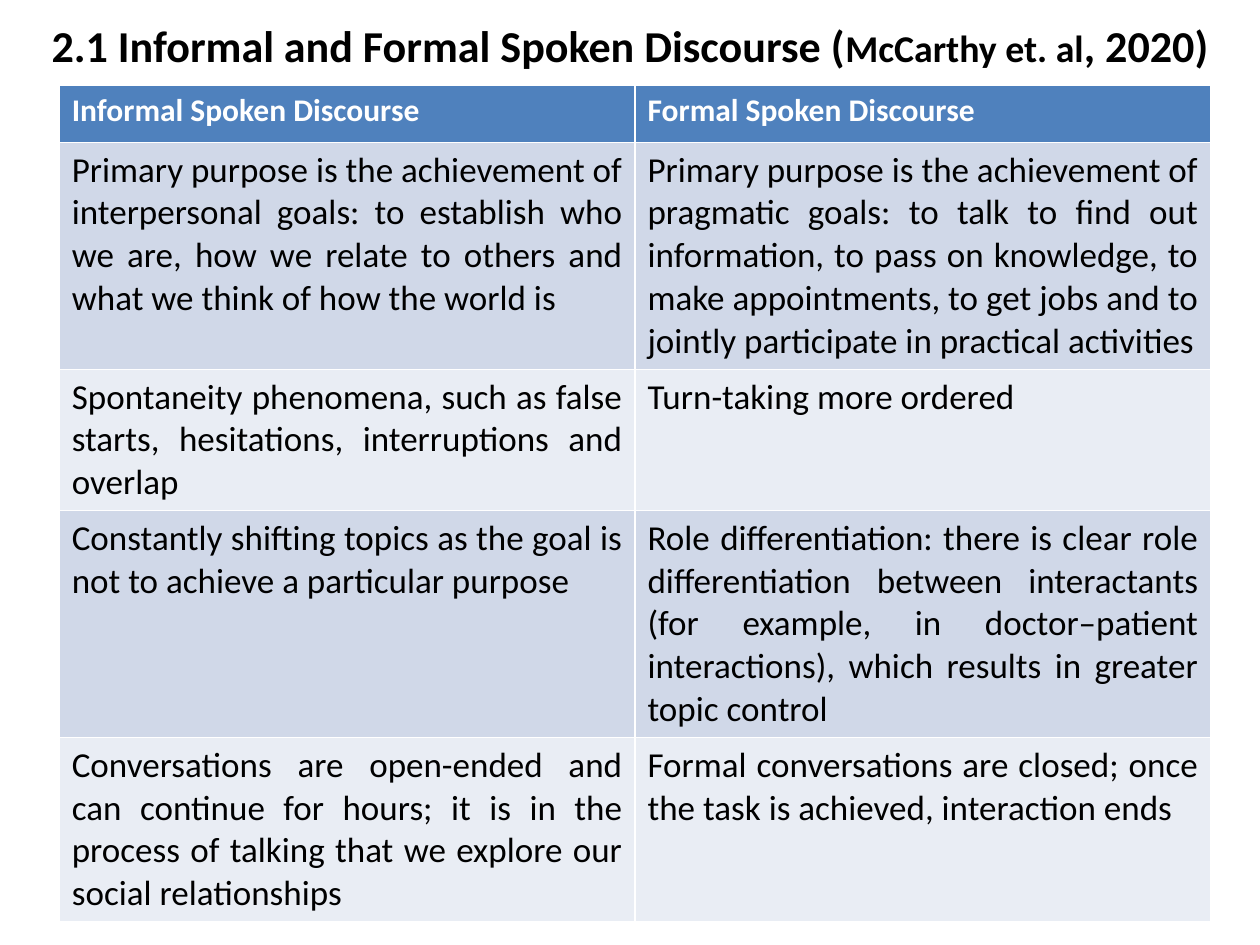
from pptx import Presentation
from pptx.dml.color import RGBColor
from pptx.enum.text import MSO_ANCHOR, MSO_AUTO_SIZE, PP_ALIGN
from pptx.util import Inches, Pt

THEME = {
    "font": "Calibri",
    "title": 25.2,
    "citation": 21.6,
    "header": 18,
    "body": 20,
    "text": "000000",
    "header_text": "FFFFFF",
    "header_fill": "4F81BD",
    "bands": ("D0D8E8", "E9EDF4"),
}

TITLE = [
    ("2.1 Informal and Formal Spoken Discourse (", "title"),
    ("McCarthy et. al", "citation"),
    (", 2020)", "title"),
]

ROWS = [
    ("Informal Spoken Discourse", "Formal Spoken Discourse"),
    (
        "Primary purpose is the achievement of interpersonal goals: to establish who we are, "
        "how we relate to others and what we think of how the world is",
        "Primary purpose is the achievement of pragmatic goals: to talk to ﬁnd out information, "
        "to pass on knowledge, to make appointments, to get jobs and to jointly participate "
        "in practical activities",
    ),
    (
        "Spontaneity phenomena, such as false starts, hesitations, interruptions and overlap",
        "Turn-taking more ordered",
    ),
    (
        "Constantly shifting topics as the goal is not to achieve a particular purpose",
        "Role diﬀerentiation: there is clear role diﬀerentiation between interactants "
        "(for example, in doctor–patient interactions), which results in greater topic control",
    ),
    (
        "Conversations are open-ended and can continue for hours; it is in the process of "
        "talking that we explore our social relationships",
        "Formal conversations are closed; once the task is achieved, interaction ends",
    ),
]
ROW_HEIGHTS = (0.45, 1.79, 1.12, 1.79, 1.46)
COLUMN_WIDTH = 4.57


def format_run(r, size, color, bold):
    r.font.name = THEME["font"]
    r.font.size = Pt(THEME[size])
    r.font.bold = bold
    r.font.color.rgb = RGBColor.from_string(THEME[color])


def add_title(s):
    sp = s.shapes.title
    sp.left, sp.top, sp.width, sp.height = map(Inches, (0, 0.01, 10, 0.69))
    tf = sp.text_frame
    tf.auto_size = MSO_AUTO_SIZE.NONE
    tf.vertical_anchor = MSO_ANCHOR.MIDDLE
    p = tf.paragraphs[0]
    p.alignment = PP_ALIGN.CENTER
    for text, size in TITLE:
        r = p.add_run()
        r.text = text
        format_run(r, size, "text", True)


def fill_cell(cell, text, row):
    is_header = row == 0
    fill = THEME["header_fill"] if is_header else THEME["bands"][(row - 1) % 2]
    cell.fill.solid()
    cell.fill.fore_color.rgb = RGBColor.from_string(fill)
    p = cell.text_frame.paragraphs[0]
    p.text = text
    if is_header:
        format_run(p.runs[0], "header", "header_text", True)
    else:
        p.alignment = PP_ALIGN.JUSTIFY
        format_run(p.runs[0], "body", "text", False)


def add_comparison(s):
    n_cols = len(ROWS[0])
    table = s.shapes.add_table(
        len(ROWS), n_cols, Inches(0.47), Inches(0.68),
        Inches(COLUMN_WIDTH * n_cols), Inches(sum(ROW_HEIGHTS)),
    ).table
    for column in table.columns:
        column.width = Inches(COLUMN_WIDTH)
    for i, (texts, height) in enumerate(zip(ROWS, ROW_HEIGHTS)):
        table.rows[i].height = Inches(height)
        for j, text in enumerate(texts):
            fill_cell(table.cell(i, j), text, i)


def main():
    prs = Presentation()
    prs.slide_width, prs.slide_height = Inches(10), Inches(7.5)
    s = prs.slides.add_slide(prs.slide_layouts[5])
    add_title(s)
    add_comparison(s)
    prs.save("out.pptx")


if __name__ == "__main__":
    main()
